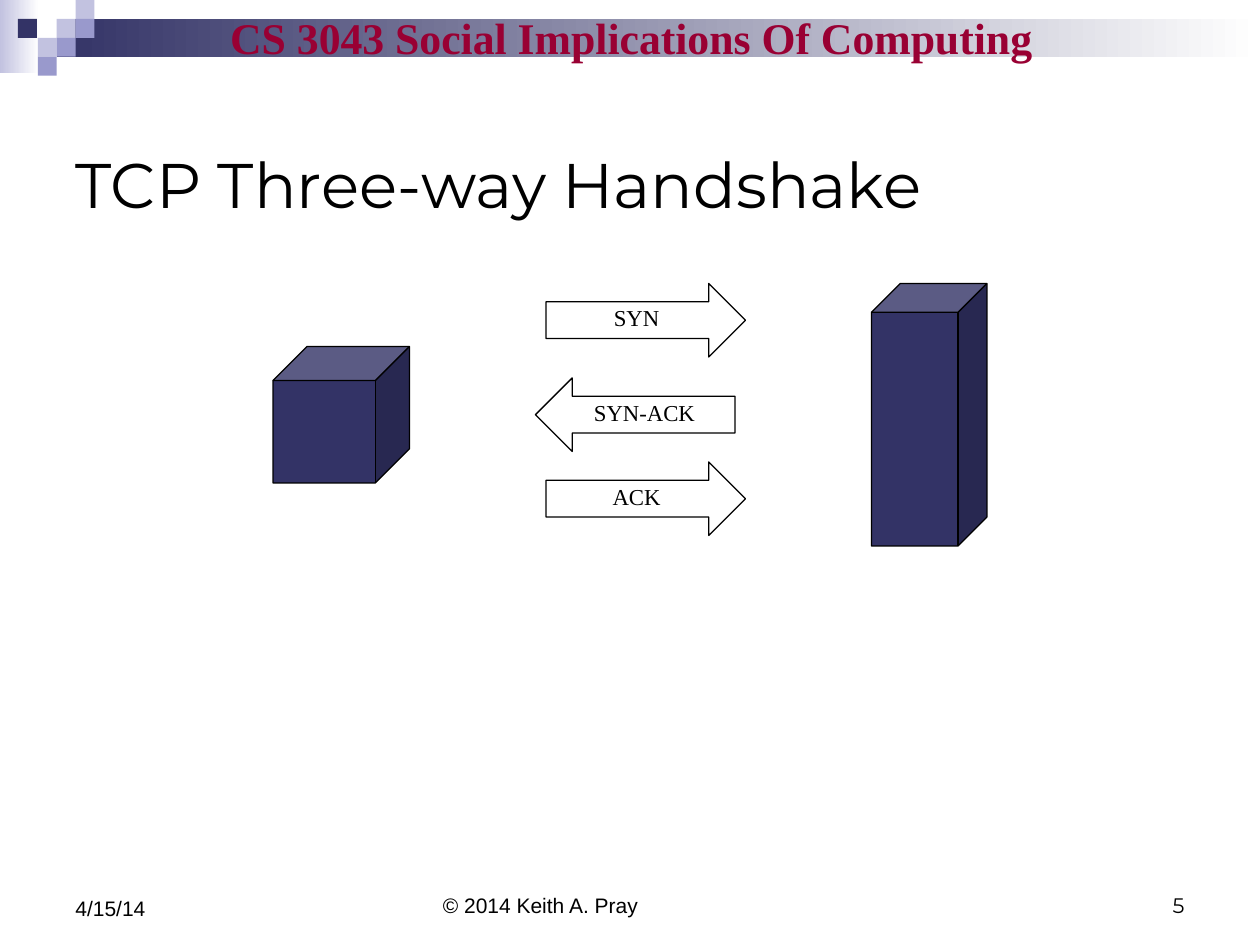
from pptx import Presentation
from pptx.dml import color
from pptx.enum import shapes, text
from pptx.util import Pt

SHAPE = shapes.MSO_SHAPE
ANCHOR = text.MSO_ANCHOR
ALIGN = text.PP_ALIGN

NAVY, LAVENDER, PALE = "333366", "9999CC", "C2C2E0"
BLACK, WHITE, CRIMSON = "000000", "FFFFFF", "990033"


def rgb(hex_code):
    return color.RGBColor.from_string(hex_code)


def apply(target, formats):
    for name, value in formats.items():
        setattr(target, name, value)


def write(frame, words, font, size, ink=BLACK, bold=False, frame_format=None, paragraph_format=None):
    apply(frame, frame_format or {})
    paragraph = frame.paragraphs[0]
    apply(paragraph, paragraph_format or {})
    run = paragraph.add_run()
    run.text = words
    apply(run.font, {"name": font, "size": Pt(size), "bold": bold})
    run.font.color.rgb = rgb(ink)


def add_label(slide, box, words, font, size, anchor, align=ALIGN.LEFT, wrap=True, **look):
    label = slide.shapes.add_textbox(*map(Pt, box))
    write(label.text_frame, words, font, size,
          frame_format={"word_wrap": wrap, "vertical_anchor": anchor},
          paragraph_format={"alignment": align}, **look)


def add_solid(slide, kind, box, fill=None, outline=None):
    solid = slide.shapes.add_shape(kind, *map(Pt, box))
    solid.shadow.inherit = False
    if fill:
        solid.fill.solid()
        solid.fill.fore_color.rgb = rgb(fill)
    else:
        solid.fill.background()
    if outline:
        solid.line.color.rgb = rgb(outline)
        solid.line.width = Pt(0.75)
    else:
        solid.line.fill.background()
    return solid


def add_fade(slide, box, start):
    band = add_solid(slide, SHAPE.RECTANGLE, box)
    band.fill.gradient()
    band.fill.gradient_angle = 0
    for stop, shade, position in zip(band.fill.gradient_stops, (start, WHITE), (0, 1)):
        stop.color.rgb = rgb(shade)
        stop.position = position


def add_banner(slide, box):
    left, top, width, height = box
    tile = height / 4
    add_fade(slide, (left, top, 22.3, 41.8), PALE)
    add_fade(slide, (left + 3 * tile, top + tile, width - 3 * tile, 2 * tile), NAVY)
    tiles = [(3, 1, PALE), (4, 0, PALE), (4, 1, LAVENDER), (2, 2, PALE),
             (0.95, 1, NAVY), (3, 2, LAVENDER), (2, 3, LAVENDER)]
    for column, row, shade in tiles:
        place = (left + column * tile, top + row * tile, tile, tile)
        add_solid(slide, SHAPE.RECTANGLE, place, shade)
    add_label(slide, (left + 123.8, top + 2.2, 473.8, 37.4),
              "CS 3043 Social Implications Of Computing", "Times New Roman", 25,
              ANCHOR.MIDDLE, ALIGN.CENTER, wrap=False, ink=CRIMSON, bold=True)


def add_heading(slide, box):
    add_label(slide, box, "TCP Three-way Handshake", "Montserrat", 36, ANCHOR.MIDDLE)


def add_handshake(slide, box):
    left, top, width, height = box
    hosts = [(left, top + 36, 78, 78), (left + width - 66, top, 66, height)]
    for host in hosts:
        add_solid(slide, SHAPE.CUBE, host, NAVY, BLACK)
    messages = [("SYN", SHAPE.RIGHT_ARROW, 156, 0),
                ("SYN-ACK", SHAPE.LEFT_ARROW, 150, 54),
                ("ACK", SHAPE.RIGHT_ARROW, 156, 102)]
    for words, kind, across, down in messages:
        arrow = add_solid(slide, kind, (left + across, top + down, 114, 42), outline=BLACK)
        write(arrow.text_frame, words, "Times New Roman", 13,
              frame_format={"word_wrap": False, "vertical_anchor": ANCHOR.MIDDLE},
              paragraph_format={"alignment": ALIGN.CENTER, "line_spacing": 0.8})


def add_footer(slide, box):
    left, top, width, height = box
    add_label(slide, (left + 210, top, 228, height), "© 2014 Keith A. Pray",
              "Arial", 12, ANCHOR.BOTTOM)
    add_label(slide, (left + width - 168, top, 168, height), "5",
              "Montserrat", 12, ANCHOR.BOTTOM, ALIGN.RIGHT)
    add_label(slide, (left, top, 168, height + 1.5), "4/15/14",
              "Arial", 12, ANCHOR.BOTTOM)


def main():
    deck = Presentation()
    apply(deck, {"slide_width": Pt(720), "slide_height": Pt(540)})
    slide = deck.slides.add_slide(deck.slide_layouts[6])
    add_banner(slide, (0, 0, 720, 43.2))
    add_heading(slide, (36, 60, 648, 90))
    add_handshake(slide, (156, 162, 408, 150))
    add_footer(slide, (36, 492, 648, 36))
    deck.save("out.pptx")


if __name__ == "__main__":
    main()
